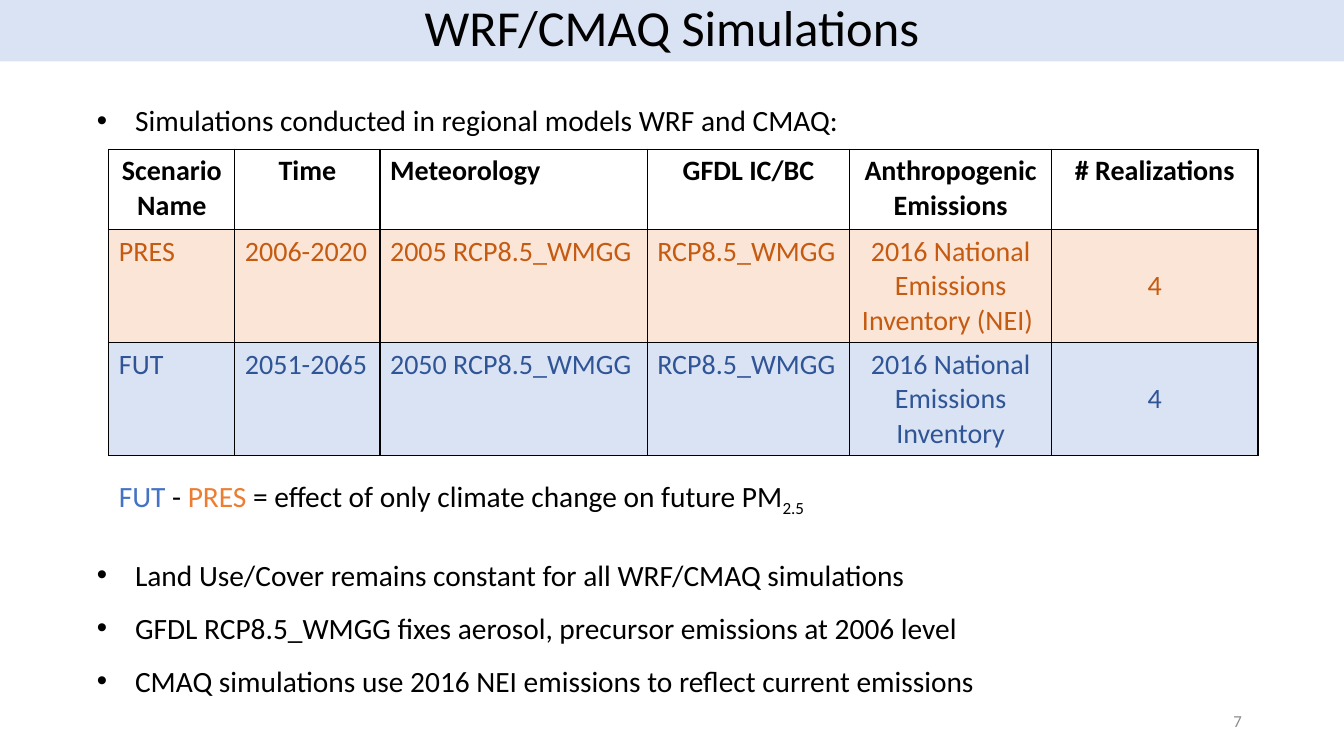
from dataclasses import dataclass

from lxml import etree
from pptx import Presentation
from pptx.dml.color import RGBColor
from pptx.enum.text import MSO_ANCHOR, MSO_AUTO_SIZE, PP_ALIGN
from pptx.oxml.ns import qn
from pptx.util import Inches, Pt

LEFT, CENTER, RIGHT = PP_ALIGN.LEFT, PP_ALIGN.CENTER, PP_ALIGN.RIGHT
TOP, MIDDLE = MSO_ANCHOR.TOP, MSO_ANCHOR.MIDDLE
FIXED = MSO_AUTO_SIZE.NONE
TWO_CONTENT = 3
SLIDE_WIDTH, SLIDE_HEIGHT = Inches(13.333), Inches(7.5)


@dataclass(frozen=True)
class Theme:
    font: str = "Calibri"
    ink: str = "000000"
    muted: str = "8C8C8C"
    band: str = "DAE3F3"
    present: str = "ED7D31"
    present_text: str = "C55A11"
    present_fill: str = "FBE5D6"
    future: str = "4472C4"
    future_text: str = "2F5597"
    title_size: int = 36
    body_size: int = 21
    table_size: int = 20
    number_size: int = 12
    border: float = 1
    list_spacing: float = 1.5


THEME = Theme()

COLUMN_SHARES = [9.38, 10.8, 19.88, 15.08, 15, 15.38]
ROW_SHARES = [10.67, 14.93, 14.93]
HEADER_ALIGNS = [CENTER, CENTER, LEFT, CENTER, CENTER, CENTER]
SCENARIO_ALIGNS = [LEFT, LEFT, LEFT, LEFT, CENTER, CENTER]
HEADERS = ["Scenario Name", "Time", "Meteorology", "GFDL IC/BC",
           "Anthropogenic Emissions", "# Realizations"]
PRESENT = ["PRES", "2006-2020", "2005 RCP8.5_WMGG", "RCP8.5_WMGG",
           "2016 National Emissions Inventory (NEI) ", "4"]
FUTURE = ["FUT", "2051-2065", "2050 RCP8.5_WMGG", "RCP8.5_WMGG",
          "2016 National Emissions Inventory", "4"]


def across(share):
    return round(SLIDE_WIDTH * share / 100)


def down(share):
    return round(SLIDE_HEIGHT * share / 100)


def box(left, top, width, height):
    return across(left), down(top), across(width), down(height)


def place(holder, area):
    holder.left, holder.top, holder.width, holder.height = area


def style(paragraph, size, color=THEME.ink, align=LEFT, bold=False):
    paragraph.alignment = align
    font = paragraph.font
    font.name, font.size, font.bold = THEME.font, Pt(size), bold
    font.color.rgb = RGBColor.from_string(color)


def fill_title(title, text, area):
    place(title, area)
    title.fill.solid()
    title.fill.fore_color.rgb = RGBColor.from_string(THEME.band)
    frame = title.text_frame
    frame.text = text
    frame.auto_size, frame.vertical_anchor = FIXED, MIDDLE
    style(frame.paragraphs[0], THEME.title_size, align=CENTER)
    frame.paragraphs[0].line_spacing = 0.9


def fill_list(body, items, area):
    place(body, area)
    frame = body.text_frame
    frame.text = "\n".join(items)
    frame.auto_size, frame.vertical_anchor = FIXED, TOP
    indent = Inches(0.38)
    for paragraph in frame.paragraphs:
        style(paragraph, THEME.body_size)
        paragraph.line_spacing = THEME.list_spacing
        paragraph.space_before = Pt(0)
        properties = paragraph._p.get_or_add_pPr()
        properties.set("marL", str(indent))
        properties.set("indent", str(-indent))


def add_text(slide, area, anchor):
    frame = slide.shapes.add_textbox(*area).text_frame
    frame.word_wrap, frame.vertical_anchor = True, anchor
    return frame.paragraphs[0]


def add_difference(slide, area):
    paragraph = add_text(slide, area, TOP)
    style(paragraph, THEME.body_size)
    paragraph.line_spacing = THEME.list_spacing
    parts = [("FUT ", THEME.future), ("- ", THEME.ink), ("PRES ", THEME.present),
             ("= effect of only climate change on future PM", THEME.ink),
             ("2.5", THEME.ink)]
    for text, color in parts:
        run = paragraph.add_run()
        run.text = text
        run.font.name, run.font.size = THEME.font, Pt(THEME.body_size)
        run.font.color.rgb = RGBColor.from_string(color)
    run.font._element.set("baseline", "-25000")


def add_page_number(slide, number, area):
    paragraph = add_text(slide, area, MIDDLE)
    paragraph.text = number
    style(paragraph, THEME.number_size, THEME.muted, RIGHT)


def outline(cell):
    properties = cell._tc.get_or_add_tcPr()
    for side in ("a:lnL", "a:lnR", "a:lnT", "a:lnB"):
        line = etree.SubElement(properties, qn(side), w=str(Pt(THEME.border)))
        solid = etree.SubElement(line, qn("a:solidFill"))
        etree.SubElement(solid, qn("a:srgbClr"), val=THEME.ink)


def fill_row(cells, texts, aligns, color, fill=None, bold=False):
    for cell, text, align in zip(cells, texts, aligns):
        cell.text = text
        cell.vertical_anchor = MIDDLE if text == "4" else TOP
        style(cell.text_frame.paragraphs[0], THEME.table_size, color, align, bold)
        outline(cell)
        if fill:
            cell.fill.solid()
            cell.fill.fore_color.rgb = RGBColor.from_string(fill)
        else:
            cell.fill.background()


def add_scenarios(slide, left, top):
    area = box(left, top, sum(COLUMN_SHARES), sum(ROW_SHARES))
    table = slide.shapes.add_table(len(ROW_SHARES), len(COLUMN_SHARES), *area).table
    table.first_row = table.horz_banding = False
    for column, share in zip(table.columns, COLUMN_SHARES):
        column.width = across(share)
    for row, share in zip(table.rows, ROW_SHARES):
        row.height = down(share)
    header, present, future = (row.cells for row in table.rows)
    fill_row(header, HEADERS, HEADER_ALIGNS, THEME.ink, bold=True)
    fill_row(present, PRESENT, SCENARIO_ALIGNS, THEME.present_text, THEME.present_fill)
    fill_row(future, FUTURE, SCENARIO_ALIGNS, THEME.future_text, THEME.band)


def main():
    deck = Presentation()
    deck.slide_width, deck.slide_height = SLIDE_WIDTH, SLIDE_HEIGHT
    slide = deck.slides.add_slide(deck.slide_layouts[TWO_CONTENT])
    title, introduction, assumptions = slide.placeholders

    fill_title(title, "WRF/CMAQ Simulations", box(0, -0.13, 100, 8.27))
    fill_list(introduction,
              ["Simulations conducted in regional models WRF and CMAQ:"],
              box(6.45, 10.53, 86.7, 7.73))
    add_scenarios(slide, 8.1, 19.73)
    add_difference(slide, box(8.1, 59.87, 89.02, 7.73))
    fill_list(assumptions,
              ["Land Use/Cover remains constant for all WRF/CMAQ simulations",
               "GFDL RCP8.5_WMGG fixes aerosol, precursor emissions at 2006 level",
               "CMAQ simulations use 2016 NEI emissions to reflect current emissions"],
              box(6.45, 70.67, 86.7, 21.87))
    add_page_number(slide, "7", box(70.65, 92.67, 22.5, 5.33))
    deck.save("out.pptx")


if __name__ == "__main__":
    main()
